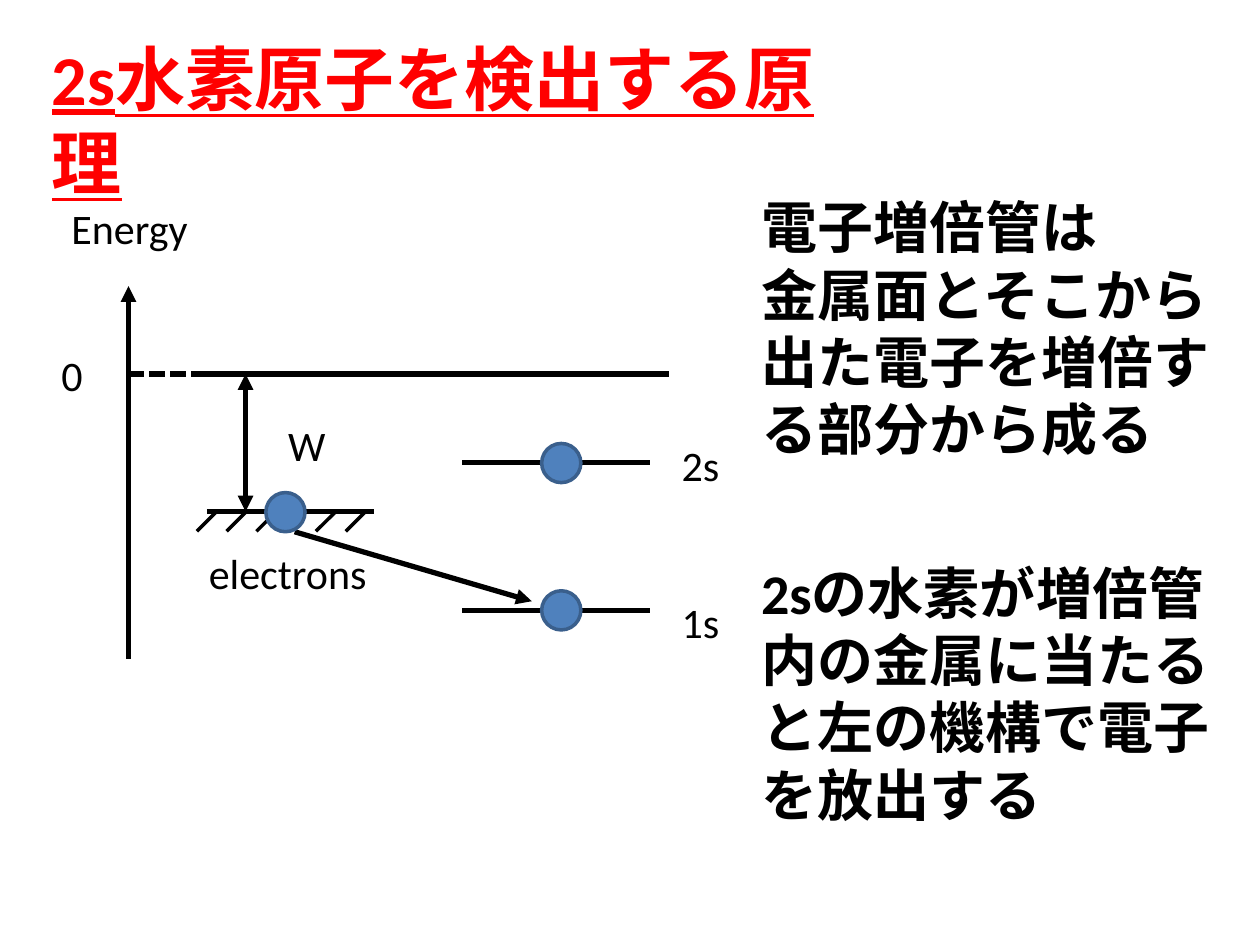
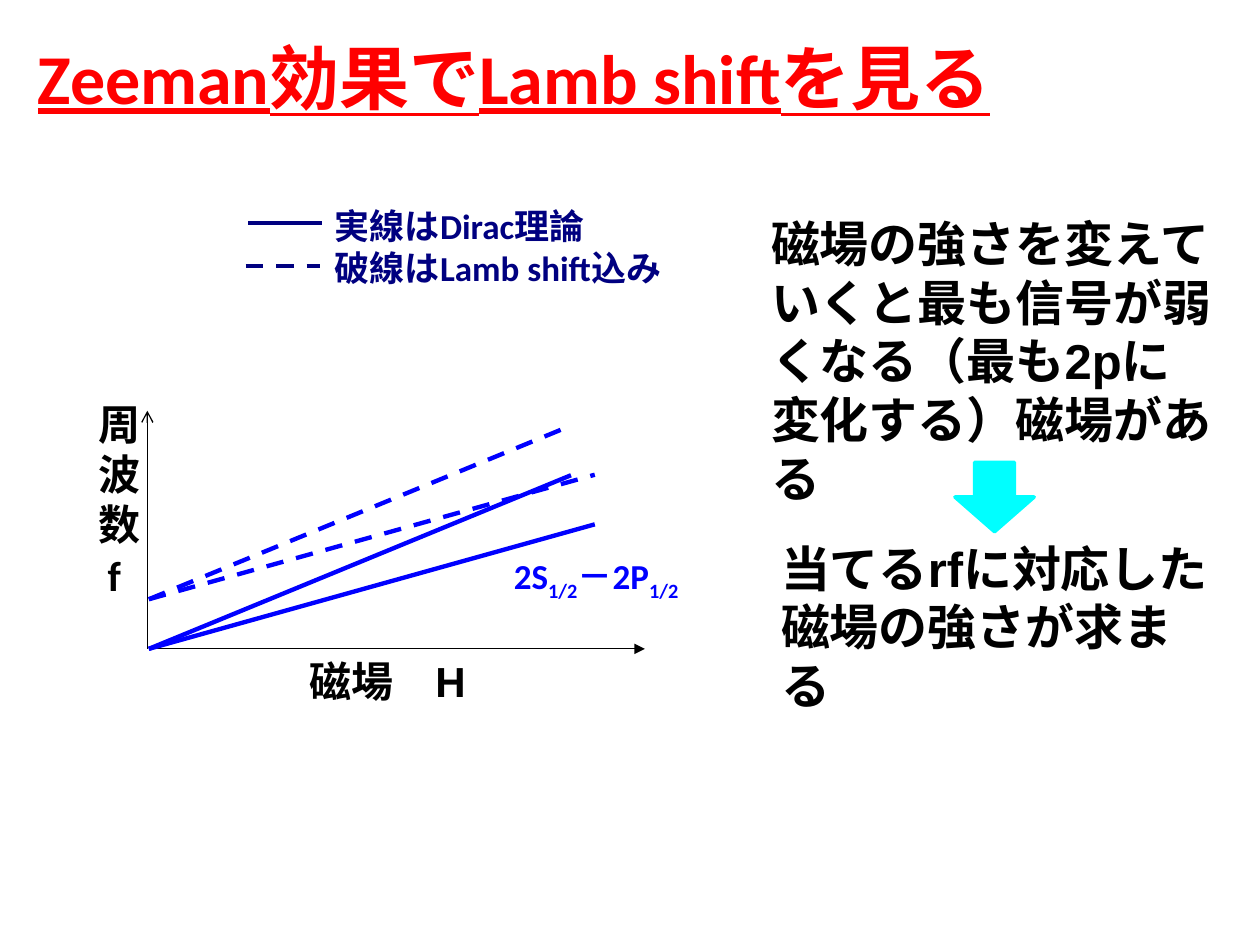
from lxml import etree
from pptx import Presentation
from pptx.dml.color import RGBColor
from pptx.enum.dml import MSO_LINE
from pptx.enum.shapes import MSO_CONNECTOR, MSO_SHAPE
from pptx.enum.text import MSO_ANCHOR, MSO_AUTO_SIZE, PP_ALIGN
from pptx.oxml.ns import qn
from pptx.util import Cm, Pt

STRAIGHT = MSO_CONNECTOR.STRAIGHT
DASH, SHORT_DASH = MSO_LINE.DASH, MSO_LINE.SQUARE_DOT
ELLIPSE, DOWN_ARROW = MSO_SHAPE.OVAL, MSO_SHAPE.DOWN_ARROW
TOP, LEFT, NO_FIT = MSO_ANCHOR.TOP, PP_ALIGN.LEFT, MSO_AUTO_SIZE.NONE

COLORS = {"title": "FF0000", "text": "000000", "atom": "4F81BD", "atom_edge": "3A5F8C",
          "legend": "000080", "level": "0000FF", "arrow": "00FFFF"}
TITLE = {"size": Pt(40), "name": "Calibri", "bold": True, "underline": True}
LABEL = {"size": Pt(24), "name": "Calibri"}
AXIS = {"size": Pt(24), "name": "Arial", "bold": True}
NOTE_1 = {"size": Pt(32), "name": "Calibri", "bold": True}
NOTE_2 = {"size": Pt(28), "name": "Arial", "bold": True}
SMALL = {"size": Pt(20), "name": "Calibri", "bold": True}


def write(sp, box, paragraphs, fmt, color="text"):
    for name, value in zip(("left", "top", "width", "height"), box):
        setattr(sp, name, Cm(value))
    tf = sp.text_frame
    for name, value in {"word_wrap": True, "auto_size": NO_FIT, "vertical_anchor": TOP}.items():
        setattr(tf, name, value)
    for i, runs in enumerate(paragraphs):
        p = tf.add_paragraph() if i else tf.paragraphs[0]
        p.alignment = LEFT
        p.space_before = Pt(0)
        pPr = p._p.get_or_add_pPr()
        pPr.set("marL", "0")
        pPr.set("indent", "0")
        etree.SubElement(pPr, qn("a:buNone"))
        for text, extra in runs:
            r = p.add_run()
            r.text = text
            r.font.color.rgb = RGBColor.from_string(COLORS[color])
            for name, value in {**fmt, **extra}.items():
                if name == "baseline":
                    r._r.get_or_add_rPr().set(name, value)
                else:
                    setattr(r.font, name, value)


def line(s, x1, y1, x2, y2, width=3, color="text", dash=None, **ends):
    sp = s.shapes.add_connector(STRAIGHT, Cm(x1), Cm(y1), Cm(x2), Cm(y2))
    sp.line.color.rgb = RGBColor.from_string(COLORS[color])
    sp.line.width = Pt(width)
    if dash:
        sp.line.dash_style = dash
    ln = sp.line._get_or_add_ln()
    for end in ("headEnd", "tailEnd"):
        if end in ends:
            etree.SubElement(ln, qn(f"a:{end}"), type=ends[end])
    etree.SubElement(sp._element.spPr, qn("a:effectLst"))


prs = Presentation()
prs.slide_width, prs.slide_height = Cm(25.4), Cm(19.05)
layout = prs.slide_layouts[3]

s = prs.slides.add_slide(layout)
title, upper, lower = s.placeholders
write(title, (0.79, 0.58, 17.07, 1.96), [[("2s水素原子を検出する原理", {})]], TITLE, "title")
write(upper, (15.09, 3.76, 9.93, 5.74),
      [[("電子増倍管は", {})], [("金属面とそこから出た電子を増倍する部分から成る", {})]], NOTE_1)
write(lower, (15.09, 11.13, 10.31, 5.74),
      [[("2sの水素が増倍管内の金属に当たると左の機構で電子を放出する", {})]], NOTE_1)

zero_y, metal_y = 7.54, 10.31
line(s, 2.59, 13.28, 2.59, 5.77, tailEnd="triangle")
for x1, x2, y in [(4.17, 13.49, zero_y), (4.17, 7.54, metal_y),
                  (9.32, 13.11, 9.32), (9.32, 13.11, 12.3)]:
    line(s, x1, y, x2, y)
line(s, 4.17, zero_y, 2.59, zero_y, dash=SHORT_DASH)
line(s, 4.95, zero_y, 4.95, metal_y, headEnd="triangle", tailEnd="triangle")
for i in range(6):
    x = 4.37 + 0.6 * i
    line(s, x, metal_y, x - 0.4, metal_y + 0.4, width=2)
line(s, 5.94, 10.72, 10.72, 12.12, tailEnd="triangle")

for text, x, y, width in [("Energy", 1.19, 3.96, 3.96), ("0", 0.99, 6.93, 0.99),
                          ("W", 5.56, 8.33, 1.19), ("1s", 13.49, 11.91, 2.18),
                          ("2s", 13.49, 8.74, 1.78), ("electrons", 3.96, 10.92, 4.17)]:
    write(s.shapes.add_textbox(0, 0, 0, 0), (x, y, width, 1.3), [[(text, {})]], LABEL)

for x, y in [(10.92, 8.94), (10.92, 11.91), (5.36, 9.93)]:
    sp = s.shapes.add_shape(ELLIPSE, Cm(x), Cm(y), Cm(0.79), Cm(0.79))
    sp.shadow.inherit = False
    sp.fill.solid()
    sp.fill.fore_color.rgb = RGBColor.from_string(COLORS["atom"])
    sp.line.color.rgb = RGBColor.from_string(COLORS["atom_edge"])
    sp.line.width = Pt(2)

s = prs.slides.add_slide(layout)
title, upper, lower = s.placeholders
write(title, (0.51, 0.56, 22.5, 1.96),
      [[("Zeeman", {}), ("効果で", {"name": "Arial"}),
        ("Lamb shift", {}), ("を見る", {"name": "Arial"})]], TITLE, "title")
write(upper, (15.29, 4.17, 9.53, 4.6),
      [[("磁場の強さを変えていくと最も信号が弱くなる（最も2pに変化する）磁場がある", {})]], NOTE_2)
write(lower, (15.49, 10.72, 9.12, 3.28),
      [[("当てるrfに対応した磁場の強さが求まる", {})]], NOTE_2)

origin_x, origin_y = 3, 13.08
line(s, origin_x, origin_y, 13, origin_y, width=0.75, tailEnd="triangle")
line(s, 2.97, origin_y, 2.97, 8.28, width=0.75, tailEnd="arrow")
for shift, dash in [(0, None), (1, DASH)]:
    for x, y in [(11.51, 9.58), (11.99, 10.57)]:
        line(s, origin_x, origin_y - shift, x, y - shift, 2.5, "level", dash)
for x, y, dash in [(5, 4.5, None), (4.95, 5.36, DASH)]:
    line(s, x, y, x + 1.5, y, 2.5, "legend", dash)

sub = {"baseline": "-25000"}
for box, paragraphs, fmt, color in [
    ((5.99, 13.08, 4.5, 1.02), [[("磁場\u3000H".replace("\u3000", "　"), {})]], AXIS, "text"),
    ((1.73, 7.9, 1.27, 5), [[("周波数", {})], [(" f", {})]], {**LABEL, "bold": True}, "text"),
    ((6.5, 3.99, 7.8, 1.78),
     [[("実線はDirac理論", {})], [("破線はLamb shift込み", {})]], SMALL, "legend"),
    ((10.11, 11.05, 4.39, 1.02),
     [[("2S", {}), ("1/2", sub), ("－2P", {}), ("1/2", sub)]], SMALL, "level"),
]:
    write(s.shapes.add_textbox(0, 0, 0, 0), box, paragraphs, fmt, color)

sp = s.shapes.add_shape(DOWN_ARROW, Cm(19.25), Cm(9.32), Cm(1.6), Cm(1.4))
sp.shadow.inherit = False
sp.fill.solid()
sp.fill.fore_color.rgb = RGBColor.from_string(COLORS["arrow"])
sp.line.color.rgb = RGBColor.from_string(COLORS["arrow"])
sp.line.width = Pt(2)

prs.save("out.pptx")
